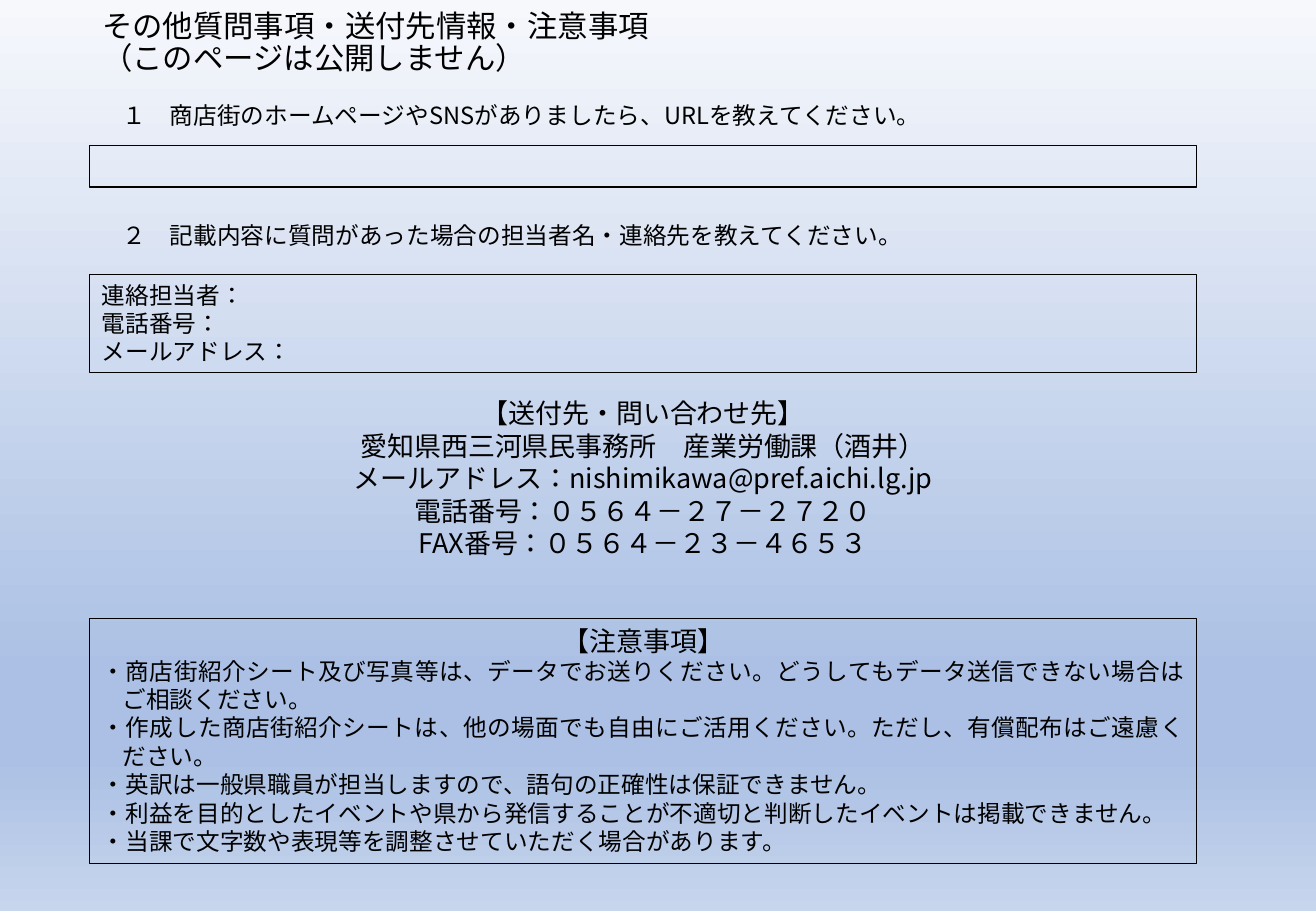
from lxml import etree
from pptx import Presentation, util as u
from pptx.dml.color import RGBColor
from pptx.enum import lang, shapes, text
from pptx.oxml import ns

ALIGN = text.PP_ALIGN
LEFT, WIDTH = 6.83, 84.12
QUESTION_LEFT = 8.4
GRADIENT = [(0, "F6F8FC"), (74, "ABC0E4"), (83, "ABC0E4"), (100, "C7D5ED")]
QUESTIONS = [
    (10.4, "１　商店街のホームページやSNSがありましたら、URLを教えてください。"),
    (23.6, "２　記載内容に質問があった場合の担当者名・連絡先を教えてください。"),
]
CONTACT_FIELDS = ["連絡担当者：", "電話番号：", "メールアドレス："]
DESTINATION = [
    "【送付先・問い合わせ先】",
    "愛知県西三河県民事務所　産業労働課（酒井）",
    "メールアドレス：nishimikawa@pref.aichi.lg.jp",
    "電話番号：０５６４－２７－２７２０",
    "FAX番号：０５６４－２３－４６５３",
]
NOTES = [
    "・商店街紹介シート及び写真等は、データでお送りください。どうしてもデータ送信できない場合はご相談ください。",
    "・作成した商店街紹介シートは、他の場面でも自由にご活用ください。ただし、有償配布はご遠慮ください。",
    "・英訳は一般県職員が担当しますので、語句の正確性は保証できません。",
    "・利益を目的としたイベントや県から発信することが不適切と判断したイベントは掲載できません。",
    "・当課で文字数や表現等を調整させていただく場合があります。",
]


def color(value):
    """Turn a hex string into a colour."""
    return RGBColor.from_string(value)


def write(para, content, size=14, align=ALIGN.LEFT, pitch=1.2, hang=0,
          font="Noto Sans CJK JP", ink="000000"):
    """Fill a paragraph with formatted text; a vertical tab breaks the line."""
    para.text = content
    para.alignment = align
    para.line_spacing = u.Pt(size * pitch)
    para.space_before = u.Pt(0)
    if hang:
        properties = para._p.get_or_add_pPr()
        properties.set("marL", str(u.Inches(hang)))
        properties.set("indent", str(-u.Inches(hang)))
    for span in para.runs:
        span.font.size = u.Pt(size)
        span.font.name = font
        span.font.color.rgb = color(ink)
        span.font.language_id = lang.MSO_LANGUAGE_ID.JAPANESE
        latin = span._r.find(".//" + ns.qn("a:latin"))
        east_asian = etree.Element(ns.qn("a:ea"), typeface=font)
        latin.addnext(east_asian)
    for line_break in para._p.findall(ns.qn("a:br")):
        etree.SubElement(line_break, ns.qn("a:rPr"), sz=str(size * 100))


class Sheet:
    """Hold the deck and its current page; lengths are percent of the page."""

    def __init__(self, width, height):
        """Open a deck with one title page."""
        self.deck = Presentation()
        self.deck.slide_width = u.Inches(width)
        self.deck.slide_height = u.Inches(height)
        self.page = self.deck.slides.add_slide(self.deck.slide_layouts[5])

    def area(self, left, top, width, height):
        """Convert percentages to lengths."""
        across, down = self.deck.slide_width, self.deck.slide_height
        return [int(share * side / 100) for share, side in
                zip((left, top, width, height), (across, down, across, down))]

    def background(self, stops):
        """Paint a gradient from top to bottom."""
        fill = self.page.background.fill
        fill.gradient()
        fill.gradient_angle = 270
        stop_list = self.page.element.find(".//" + ns.qn("a:gsLst"))
        for old_stop in list(stop_list):
            stop_list.remove(old_stop)
        for position, value in stops:
            stop = etree.SubElement(stop_list, ns.qn("a:gs"), pos=str(position * 1000))
            etree.SubElement(stop, ns.qn("a:srgbClr"), val=value)

    def title(self, content, *area):
        """Place the title."""
        box = self.page.shapes.title
        box.left, box.top, box.width, box.height = self.area(*area)
        frame = box.text_frame
        frame.auto_size = text.MSO_AUTO_SIZE.NONE
        frame.vertical_anchor = text.MSO_ANCHOR.MIDDLE
        write(frame.paragraphs[0], content, size=18, pitch=1.08)

    def lines(self, box, contents, **style):
        """Write one paragraph per line into a box and return its frame."""
        frame = box.text_frame
        frame.word_wrap = True
        frame.vertical_anchor = text.MSO_ANCHOR.TOP
        for index, content in enumerate(contents):
            para = frame.add_paragraph() if index else frame.paragraphs[0]
            write(para, content, **style)
        return frame

    def label(self, contents, *area, **style):
        """Add a plain text box."""
        return self.lines(self.page.shapes.add_textbox(*self.area(*area)), contents, **style)

    def outline(self, contents, *area, **style):
        """Add an outlined rectangle with text."""
        box = self.page.shapes.add_shape(shapes.MSO_SHAPE.RECTANGLE, *self.area(*area))
        box.shadow.inherit = False
        box.fill.background()
        box.line.color.rgb = color("000000")
        box.line.width = u.Pt(0.75)
        return self.lines(box, contents, **style)


def main():
    """Build the enquiry page."""
    sheet = Sheet(10.83, 7.5)
    sheet.background(GRADIENT)
    sheet.title("その他質問事項・送付先情報・注意事項\v（このページは公開しません）", LEFT, 0, 86.24, 9.47)
    for top, question in QUESTIONS:
        sheet.label([question], QUESTION_LEFT, top, WIDTH, 4.53)
    sheet.outline([], LEFT, 16, WIDTH, 4.53)
    sheet.outline(CONTACT_FIELDS, LEFT, 30.13, WIDTH, 10.8)
    sheet.label(DESTINATION, LEFT, 42.93, WIDTH, 19.33, size=16, align=ALIGN.CENTER)
    notes = sheet.outline(["【注意事項】"], LEFT, 67.87, WIDTH, 26.93,
                          size=16, align=ALIGN.CENTER, hang=0.17)
    for note in NOTES:
        write(notes.add_paragraph(), note, align=ALIGN.JUSTIFY, hang=0.17)
    sheet.deck.save("out.pptx")


if __name__ == "__main__":
    main()
